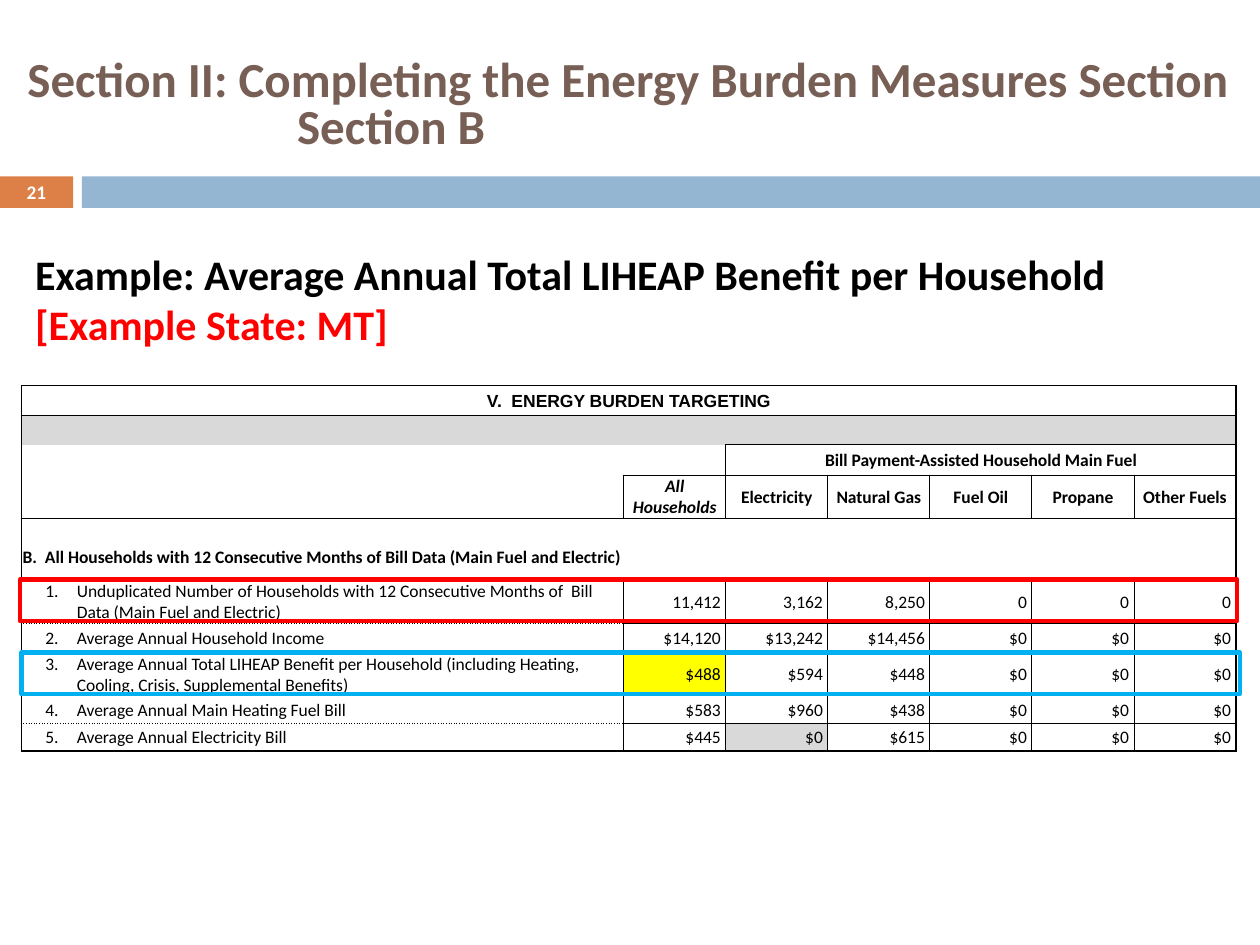
from lxml import etree
from pptx import Presentation
from pptx.dml.color import RGBColor
from pptx.enum.shapes import MSO_SHAPE
from pptx.enum.text import MSO_ANCHOR, PP_ALIGN
from pptx.oxml.ns import qn
from pptx.util import Inches, Pt

RECTANGLE = MSO_SHAPE.RECTANGLE
TOP, MIDDLE = MSO_ANCHOR.TOP, MSO_ANCHOR.MIDDLE
LEFT, CENTER, RIGHT = PP_ALIGN.LEFT, PP_ALIGN.CENTER, PP_ALIGN.RIGHT

BLACK = RGBColor(0x00, 0x00, 0x00)
WHITE = RGBColor(0xFF, 0xFF, 0xFF)
BROWN = RGBColor(0x77, 0x5F, 0x55)
ORANGE = RGBColor(0xDD, 0x80, 0x47)
BAND_BLUE = RGBColor(0x94, 0xB6, 0xD2)
GRAY = RGBColor(0xD9, 0xD9, 0xD9)
YELLOW = RGBColor(0xFF, 0xFF, 0x00)
RED = RGBColor(0xFF, 0x00, 0x00)
SKY_BLUE = RGBColor(0x00, 0xB0, 0xF0)

COLUMN_WIDTHS = [4.78] + [0.81] * 6
ROW_HEIGHTS = [0.24, 0.23, 0.24, 0.34, 0.22, 0.27, 0.34, 0.23, 0.34, 0.22, 0.22]
ROW_COUNT, COLUMN_COUNT = len(ROW_HEIGHTS), len(COLUMN_WIDTHS)
SPANS = {(0, 0): 7, (2, 2): 5}
FILLS = {(1, column): GRAY for column in range(COLUMN_COUNT)}
FILLS.update({(8, 1): YELLOW, (10, 2): GRAY})
FIRST_RULED_COLUMN = [0, 0, 2, 1, 0, 7, 0, 0, 0, 0, 0, 0]
FIRST_VERTICAL_RULE = [7, 7, 2, 1, 7, 7, 1, 1, 1, 1, 1]
FIRST_DATA_ROW = 6

HEADINGS = {
    (0, 0): "V.  ENERGY BURDEN TARGETING",
    (2, 2): "Bill Payment-Assisted Household Main Fuel",
    (5, 0): "B.  All Households with 12 Consecutive Months of Bill Data (Main Fuel and Electric)",
}
FUELS = ["All Households", "Electricity", "Natural Gas", "Fuel Oil", "Propane", "Other Fuels"]
MEASURES = [
    ("Unduplicated Number of Households with 12 Consecutive Months of  Bill Data (Main Fuel and Electric)",
     ["11,412", "3,162", "8,250", "0", "0", "0"]),
    ("Average Annual Household Income", ["$14,120", "$13,242", "$14,456", "$0", "$0", "$0"]),
    ("Average Annual Total LIHEAP Benefit per Household (including Heating, Cooling, Crisis, Supplemental Benefits)",
     ["$488", "$594", "$448", "$0", "$0", "$0"]),
    ("Average Annual Main Heating Fuel Bill", ["$583", "$960", "$438", "$0", "$0", "$0"]),
    ("Average Annual Electricity Bill", ["$445", "$0", "$615", "$0", "$0", "$0"]),
]


class SlideBuilder:
    """Draws styled elements on one slide."""

    def __init__(self, slide, font="Calibri"):
        self.slide = slide
        self.font = font

    def style(self, paragraph, size, color=BLACK, bold=True, align=LEFT, font=None):
        paragraph.alignment = align
        paragraph.font.name = font or self.font
        paragraph.font.size = Pt(size)
        paragraph.font.bold = bold
        paragraph.font.color.rgb = color

    def indent(self, paragraph, margin, first_line):
        properties = paragraph._p.get_or_add_pPr()
        properties.set("marL", str(Inches(margin)))
        properties.set("indent", str(Inches(first_line)))

    def rectangle(self, left, top, width, height, fill=None, line=None):
        shape = self.slide.shapes.add_shape(
            RECTANGLE, Inches(left), Inches(top), Inches(width), Inches(height))
        shape.shadow.inherit = False
        if fill is None:
            shape.fill.background()
        else:
            shape.fill.solid()
            shape.fill.fore_color.rgb = fill
        if line is None:
            shape.line.fill.background()
        else:
            shape.line.color.rgb = line
            shape.line.width = Pt(2.5)

    def text(self, left, top, width, height, runs, size, color=BLACK, align=LEFT, anchor=MIDDLE):
        box = self.slide.shapes.add_textbox(
            Inches(left), Inches(top), Inches(width), Inches(height))
        box.text_frame.word_wrap = True
        box.text_frame.vertical_anchor = anchor
        paragraph = box.text_frame.paragraphs[0]
        self.style(paragraph, size, color, align=align)
        for content, run_color in runs:
            run = paragraph.add_run()
            run.text = content
            if run_color is not None:
                run.font.color.rgb = run_color
        return paragraph

    def border(self, cell, side, width, dash="solid"):
        line = etree.SubElement(cell._tc.get_or_add_tcPr(), qn(f"a:{side}"), w=str(Pt(width)))
        if width == 0:
            etree.SubElement(line, qn("a:noFill"))
            return
        fill = etree.SubElement(line, qn("a:solidFill"))
        etree.SubElement(fill, qn("a:srgbClr"), val=str(BLACK))
        etree.SubElement(line, qn("a:prstDash"), val=dash)

    def vertical_border(self, cell, side, row, boundary):
        if boundary in (0, COLUMN_COUNT):
            width = 1
        else:
            width = 0.5 if boundary >= FIRST_VERTICAL_RULE[row] else 0
        self.border(cell, side, width)

    def horizontal_border(self, cell, side, boundary, column):
        if boundary in (0, ROW_COUNT):
            width = 1
        else:
            width = 0.5 if column >= FIRST_RULED_COLUMN[boundary] else 0
        dotted = column == 0 and FIRST_DATA_ROW < boundary < ROW_COUNT
        self.border(cell, side, width, "sysDot" if dotted else "solid")

    def cell(self, cell, row, column, content):
        is_data = row >= FIRST_DATA_ROW
        is_value = is_data and column > 0
        cell.margin_left = cell.margin_top = Inches(0.01)
        cell.margin_right = Inches(0.04 if is_value else 0.01)
        cell.margin_bottom = 0
        cell.vertical_anchor = TOP if row == 5 else MIDDLE
        cell.text = content
        paragraph = cell.text_frame.paragraphs[0]
        align = RIGHT if is_value else CENTER if row < 4 else LEFT
        self.style(paragraph, 10, bold=not is_data, align=align, font="Arial" if row == 0 else None)
        if (row, column) == (3, 1):
            paragraph.font.italic = True
        if is_data and column == 0:
            self.indent(paragraph, 0.43, -0.25)
        self.vertical_border(cell, "lnL", row, column)
        self.vertical_border(cell, "lnR", row, column + SPANS.get((row, column), 1))
        self.horizontal_border(cell, "lnT", row, column)
        self.horizontal_border(cell, "lnB", row + 1, column)
        if (row, column) in FILLS:
            cell.fill.solid()
            cell.fill.fore_color.rgb = FILLS[row, column]
        else:
            cell.fill.background()

    def table(self, left, top, contents):
        table = self.slide.shapes.add_table(
            ROW_COUNT, COLUMN_COUNT, Inches(left), Inches(top),
            Inches(sum(COLUMN_WIDTHS)), Inches(sum(ROW_HEIGHTS))).table
        table.first_row = table.horz_banding = False
        for column, width in zip(table.columns, COLUMN_WIDTHS):
            column.width = Inches(width)
        for row, height in zip(table.rows, ROW_HEIGHTS):
            row.height = Inches(height)
        for (row, column), span in SPANS.items():
            table.cell(row, column).merge(table.cell(row, column + span - 1))
        for row in range(ROW_COUNT):
            for column in range(COLUMN_COUNT):
                cell = table.cell(row, column)
                if not cell.is_spanned:
                    self.cell(cell, row, column, contents.get((row, column), ""))


def table_contents():
    contents = dict(HEADINGS)
    for column, fuel in enumerate(FUELS, 1):
        contents[3, column] = fuel
    for number, (label, values) in enumerate(MEASURES, 1):
        row = FIRST_DATA_ROW + number - 1
        contents[row, 0] = f"{number}.\t{label}"
        for column, value in enumerate(values, 1):
            contents[row, column] = value
    return contents


def main():
    presentation = Presentation()
    presentation.slide_width, presentation.slide_height = Inches(10), Inches(7.5)
    builder = SlideBuilder(presentation.slides.add_slide(presentation.slide_layouts[6]))
    builder.rectangle(0, 1.4, 0.58, 0.25, fill=ORANGE)
    builder.rectangle(0.65, 1.4, 9.35, 0.25, fill=BAND_BLUE)
    title = builder.text(
        0, 0.31, 10, 1.08,
        [("Section II: Completing the Energy Burden Measures Section Section B", None)], 28, BROWN)
    title.line_spacing = 0.8
    builder.indent(title, 2.26, -2.14)
    builder.text(0, 1.39, 0.58, 0.27, [("21", None)], 11, WHITE, CENTER)
    builder.text(
        0.18, 1.92, 9.82, 5.42,
        [("Example: Average Annual Total LIHEAP Benefit per Household ", None),
         ("[Example State: MT]", RED)], 24, anchor=TOP)
    builder.table(0.17, 3.06, table_contents())
    builder.rectangle(0.16, 4.6, 9.66, 0.33, line=RED)
    builder.rectangle(0.17, 5.18, 9.67, 0.33, line=SKY_BLUE)
    presentation.save("out.pptx")


if __name__ == "__main__":
    main()
